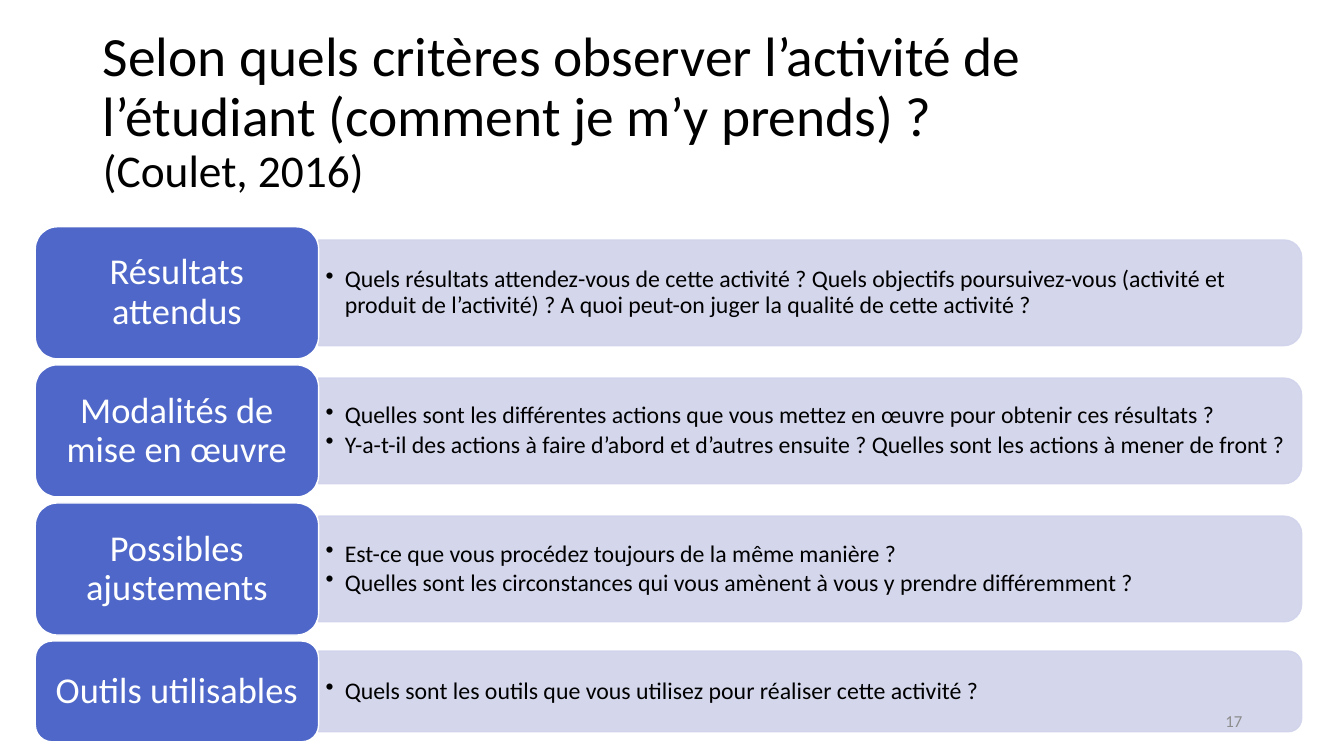
import pptx
import pptx.util
import pptx.dml.color
import pptx.enum.shapes
import pptx.enum.text
import pptx.oxml.ns
from lxml import etree

Inches, Pt = pptx.util.Inches, pptx.util.Pt
RGBColor = pptx.dml.color.RGBColor
MSO_SHAPE = pptx.enum.shapes.MSO_SHAPE
PP_ALIGN, MSO_ANCHOR = pptx.enum.text.PP_ALIGN, pptx.enum.text.MSO_ANCHOR
qn = pptx.oxml.ns.qn

TITLE = "Selon quels critères observer l’activité de l’étudiant (comment je m’y prends) ?"
REFERENCE = "(Coulet, 2016)"
PAGE_NUMBER = "17"
# label, label height, questions
CRITERIA = [
    ("Résultats attendus", 1.31, [
        "Quels résultats attendez-vous de cette activité ? Quels objectifs poursuivez-vous "
        "(activité et produit de l’activité) ? A quoi peut-on juger la qualité de cette activité ?",
    ]),
    ("Modalités de mise en œuvre", 1.31, [
        "Quelles sont les différentes actions que vous mettez en œuvre pour obtenir ces résultats ?",
        "Y-a-t-il des actions à faire d’abord et d’autres ensuite ? "
        "Quelles sont les actions à mener de front ?",
    ]),
    ("Possibles ajustements", 1.31, [
        "Est-ce que vous procédez toujours de la même manière ?",
        "Quelles sont les circonstances qui vous amènent à vous y prendre différemment ?",
    ]),
    ("Outils utilisables", 1.0, [
        "Quels sont les outils que vous utilisez pour réaliser cette activité ?",
    ]),
]

FONT = "Calibri"
BLACK = RGBColor(0x00, 0x00, 0x00)
WHITE = RGBColor(0xFF, 0xFF, 0xFF)
GREY = RGBColor(0x8C, 0x8C, 0x8C)
BLUE = RGBColor(0x4E, 0x67, 0xC8)
LAVENDER = RGBColor(0xD0, 0xD3, 0xEB)

LABEL_LEFT, LABEL_WIDTH = 0.35, 2.81
PANEL_LEFT, PANEL_WIDTH = LABEL_LEFT + LABEL_WIDTH, 9.75
PANEL_RATIO = 0.8
FIRST_TOP, ROW_GAP = 2.25, 0.06
BULLET_INDENT = 0.19


def style_paragraph(paragraph, size, color, alignment=PP_ALIGN.LEFT, line_spacing=0.9):
    paragraph.alignment = alignment
    paragraph.line_spacing = line_spacing
    paragraph.font.name = FONT
    paragraph.font.size = Pt(size)
    paragraph.font.color.rgb = color


def set_frame(frame, horizontal, vertical):
    """Wrap the text, centre it vertically and set its margins in inches."""
    frame.word_wrap = True
    frame.auto_size = pptx.enum.text.MSO_AUTO_SIZE.NONE
    frame.vertical_anchor = MSO_ANCHOR.MIDDLE
    frame.margin_left = frame.margin_right = Inches(horizontal)
    frame.margin_top = frame.margin_bottom = Inches(vertical)


def add_block(slide, kind, left, top, width, height, fill, line):
    shape = slide.shapes.add_shape(
        kind, Inches(left), Inches(top), Inches(width), Inches(height))
    shape.shadow.inherit = False
    shape.fill.solid()
    shape.fill.fore_color.rgb = fill
    shape.line.color.rgb = line
    shape.line.width = Pt(1)
    return shape


def add_text_box(slide, left, top, width, height, horizontal, vertical):
    box = slide.shapes.add_textbox(
        Inches(left), Inches(top), Inches(width), Inches(height))
    set_frame(box.text_frame, horizontal, vertical)
    return box.text_frame


def add_bullet(paragraph):
    properties = paragraph._p.get_or_add_pPr()
    properties.set("marL", str(Inches(BULLET_INDENT)))
    properties.set("indent", str(-Inches(BULLET_INDENT)))
    etree.SubElement(properties, qn("a:buChar")).set("char", "•")


def add_panel(slide, middle, height, questions):
    # Turned a quarter so that the two rounded corners face right
    center = PANEL_LEFT + PANEL_WIDTH / 2
    panel = add_block(slide, MSO_SHAPE.ROUND_2_SAME_RECTANGLE, center - height / 2,
                      middle - PANEL_WIDTH / 2, height, PANEL_WIDTH, LAVENDER, LAVENDER)
    panel.rotation = 90
    for color in panel._element.spPr.iter(qn("a:srgbClr")):
        etree.SubElement(color, qn("a:alpha")).set("val", "90000")

    frame = add_text_box(slide, PANEL_LEFT, middle - height / 2,
                         PANEL_WIDTH - 0.05, height, 0.07, 0.04)
    for index, question in enumerate(questions):
        paragraph = frame.add_paragraph() if index else frame.paragraphs[0]
        paragraph.text = question
        add_bullet(paragraph)
        style_paragraph(paragraph, 17, BLACK)
        paragraph.space_after = Pt(2.5)


def add_label(slide, top, height, text):
    label = add_block(slide, MSO_SHAPE.ROUNDED_RECTANGLE, LABEL_LEFT, top,
                      LABEL_WIDTH, height, BLUE, WHITE)
    set_frame(label.text_frame, 0.12, 0.05)
    label.text_frame.text = text
    style_paragraph(label.text_frame.paragraphs[0], 26, WHITE, PP_ALIGN.CENTER)


def add_title(slide):
    title = slide.shapes.title
    title.left, title.top = Inches(0.92), Inches(0.4)
    title.width, title.height = Inches(11.5), Inches(1.45)
    set_frame(title.text_frame, 0.1, 0.05)
    paragraph = title.text_frame.paragraphs[0]
    style_paragraph(paragraph, 39.6, BLACK)
    paragraph.add_run().text = TITLE
    paragraph.add_line_break()
    reference = paragraph.add_run()
    reference.text = REFERENCE
    reference.font.size = Pt(32.4)


def main():
    presentation = pptx.Presentation()
    presentation.slide_width, presentation.slide_height = Inches(13.33), Inches(7.5)
    slide = presentation.slides.add_slide(presentation.slide_layouts[5])
    add_title(slide)

    top = FIRST_TOP
    for label, height, questions in CRITERIA:
        add_panel(slide, top + height / 2, height * PANEL_RATIO, questions)
        add_label(slide, top, height, label)
        top += height + ROW_GAP

    number = add_text_box(slide, 9.42, 6.95, 3, 0.4, 0.1, 0.05)
    number.text = PAGE_NUMBER
    style_paragraph(number.paragraphs[0], 12, GREY, PP_ALIGN.RIGHT, 1.0)
    presentation.save("out.pptx")


if __name__ == "__main__":
    main()
